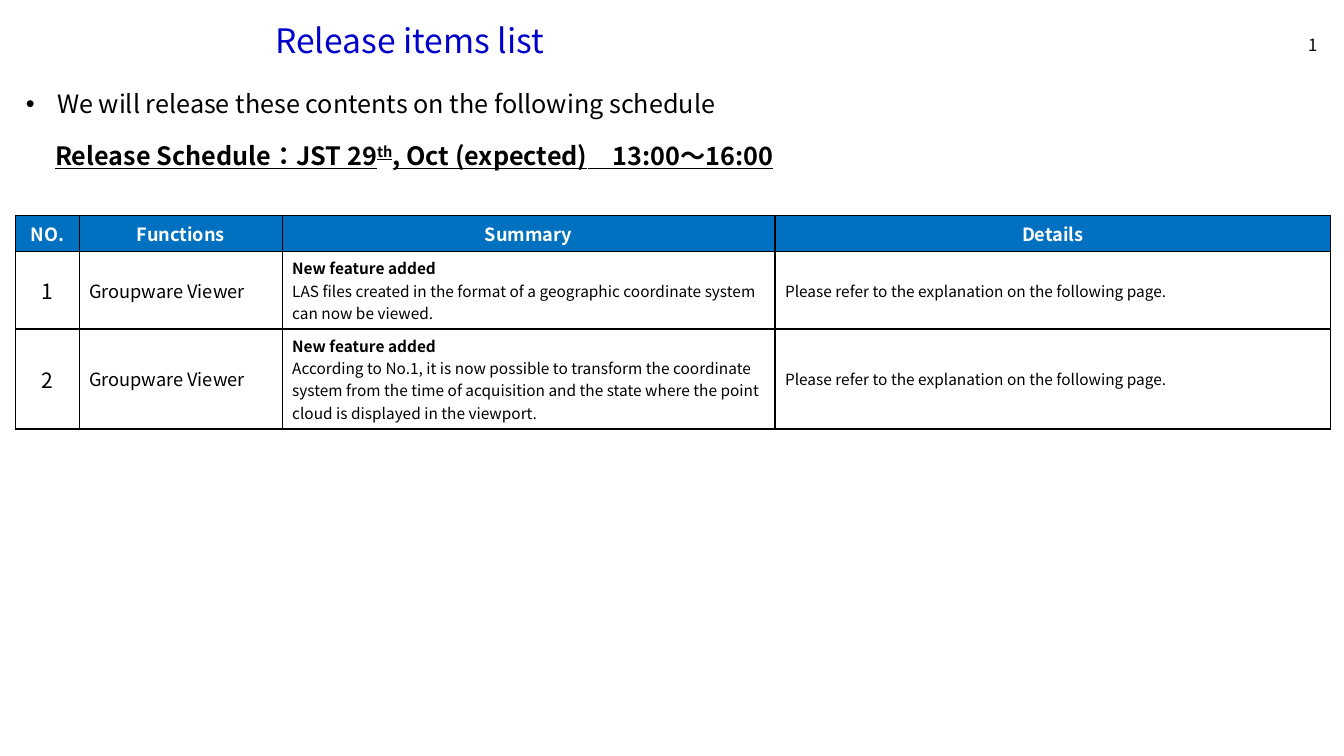
from pptx import Presentation
from pptx.dml.color import RGBColor
from pptx.enum import text as t
from pptx.oxml import parse_xml
from pptx.oxml.ns import nsdecls, qn
from pptx.util import Cm, Pt

# Content
FONT = "Noto Sans CJK JP"
BLACK, WHITE, BLUE, NAVY = "000000", "FFFFFF", "0070C0", "0000CA"
TITLE = "Release items list"
INTRO = "We will release these contents on the following schedule"
# text, baseline shift in thousandths of a percent
DATES = [
    ("Release Schedule：JST 29", 0),
    ("th", 30000),
    (", Oct (expected)　13:00～16:00", 0),
]
HEADS = ["NO.", "Functions", "Summary", "Details"]
ADDED = "New feature added"
REFER = "Please refer to the explanation on the following page."
ITEMS = [
    ("1", "Groupware Viewer",
     "LAS files created in the format of a geographic coordinate system "
     "can now be viewed.", REFER),
    ("2", "Groupware Viewer",
     "According to No.1, it is now possible to transform the coordinate "
     "system from the time of acquisition and the state where the point "
     "cloud is displayed in the viewport.", REFER),
]
WIDTHS = [1.6, 5.11, 12.42, 14]
HEIGHTS = [0.9, 1.95, 2.52]

deck = Presentation()
deck.slide_width, deck.slide_height = Cm(33.87), Cm(19.05)
slide = deck.slides.add_slide(deck.slide_layouts[6])


def color(code):
    return RGBColor.from_string(code)


def add_run(para, words, size, ink=BLACK, bold=False, line=False, base=0):
    run = para.add_run()
    run.text = words
    font = run.font
    font.name, font.size, font.bold = FONT, Pt(size), bold
    font.color.rgb = color(ink)
    props = run._r.get_or_add_rPr()
    props.set("lang", "ja-JP")
    props.find(qn("a:latin")).addnext(
        parse_xml(f'<a:ea {nsdecls("a")} typeface="{FONT}"/>'))
    if line:
        font.underline = True
    if base:
        props.set("baseline", str(base))


def add_box(left, top, width, height, anchor=t.MSO_ANCHOR.TOP):
    frame = slide.shapes.add_textbox(
        Cm(left), Cm(top), Cm(width), Cm(height)).text_frame
    frame.word_wrap = True
    frame.vertical_anchor = anchor
    return frame.paragraphs[0]


def style_cell(cell, fill):
    props = cell._tc.get_or_add_tcPr()
    for side in "LRTB":
        props.append(parse_xml(
            f'<a:ln{side} {nsdecls("a")} w="12700"><a:solidFill>'
            f'<a:srgbClr val="{BLACK}"/></a:solidFill></a:ln{side}>'))
    cell.fill.solid()
    cell.fill.fore_color.rgb = color(fill)
    cell.vertical_anchor = t.MSO_ANCHOR.MIDDLE


# Page number
para = add_box(31.7, 0.76, 1.75, 0.76, t.MSO_ANCHOR.MIDDLE)
para.alignment = t.PP_ALIGN.RIGHT
add_run(para, "1", 12)

# Release table
table = slide.shapes.add_table(
    len(HEIGHTS), len(WIDTHS), Cm(0.4), Cm(5.44),
    Cm(sum(WIDTHS)), Cm(sum(HEIGHTS))).table
for col, width in zip(table.columns, WIDTHS):
    col.width = Cm(width)
for row, height in zip(table.rows, HEIGHTS):
    row.height = Cm(height)

SIZES = [15, 13, 11, 11]
for r, row in enumerate([HEADS, *ITEMS]):
    head = r == 0
    for c, words in enumerate(row):
        cell = table.cell(r, c)
        style_cell(cell, BLUE if head else WHITE)
        para = cell.text_frame.paragraphs[0]
        if head or c == 0:
            para.alignment = t.PP_ALIGN.CENTER
        if not head and c == 2:
            add_run(para, ADDED, SIZES[c], bold=True)
            para = cell.text_frame.add_paragraph()
        add_run(para, words, 13 if head else SIZES[c],
                WHITE if head else BLACK, bold=head)

# Bulleted introduction
para = add_box(0.4, 2.11, 32.72, 1.02)
props = para._p.get_or_add_pPr()
props.set("marL", str(Cm(0.79)))
props.set("indent", str(-Cm(0.79)))
props.append(parse_xml(f'<a:buFont {nsdecls("a")} typeface="Arial"/>'))
props.append(parse_xml(f'<a:buChar {nsdecls("a")} char="•"/>'))
add_run(para, INTRO, 18)

# Schedule line
para = add_box(1.14, 3.4, 21.72, 1.02)
for words, base in DATES:
    add_run(para, words, 18, bold=True, line=True, base=base)

# Title
para = add_box(6.69, 0.53, 24.26, 1.07, t.MSO_ANCHOR.MIDDLE)
para.line_spacing = 0.9
add_run(para, TITLE, 24, NAVY)

deck.save("out.pptx")
